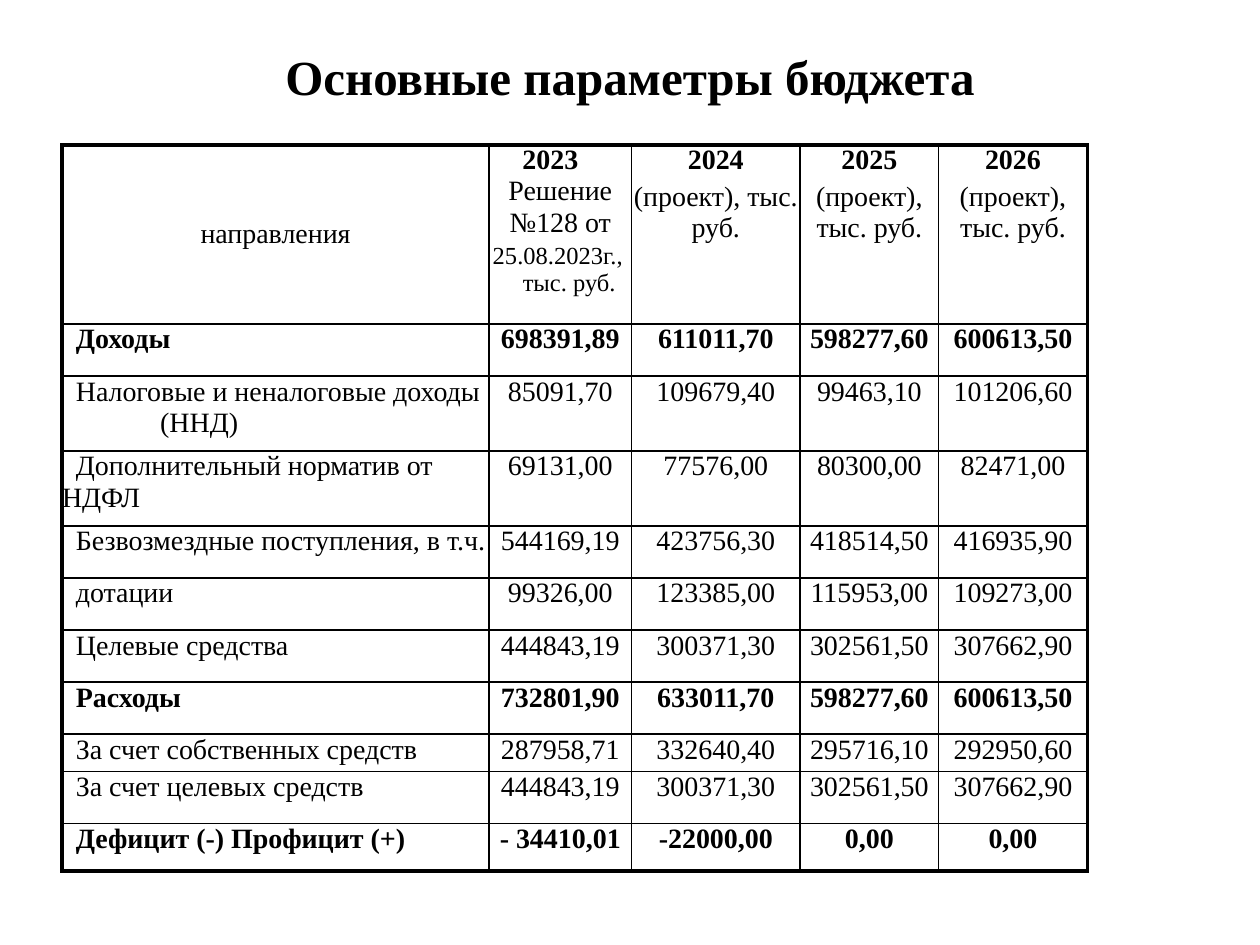
from lxml.etree import SubElement
from pptx import Presentation
from pptx.dml.color import RGBColor
from pptx.enum.text import MSO_ANCHOR, PP_ALIGN
from pptx.oxml.ns import qn
from pptx.util import Cm, Pt

COLORS = {"text": "000000", "border": "000000"}
FONT = "Times New Roman"
THIN, THICK = Pt(1), Pt(2.25)
COLUMN_WIDTHS = [8.61, 2.87, 3.4, 2.79, 3]
ROW_HEIGHTS = [3.61, 1.05, 1.51, 1.51, 1.05, 1.05, 1.05, 1.05, 0.75, 1.05, 0.96]
LABEL_INDENT = 0.28
YEARS = ["2024", "2025", "2026"]
BOLD_ROWS = {"Доходы", "Расходы", "Дефицит (-) Профицит (+)"}
BUDGET = [
    ("Доходы", "698391,89", "611011,70", "598277,60", "600613,50"),
    ("Налоговые и неналоговые доходы", "85091,70", "109679,40", "99463,10", "101206,60"),
    ("Дополнительный норматив от НДФЛ", "69131,00", "77576,00", "80300,00", "82471,00"),
    ("Безвозмездные поступления, в т.ч.", "544169,19", "423756,30", "418514,50", "416935,90"),
    ("дотации", "99326,00", "123385,00", "115953,00", "109273,00"),
    ("Целевые средства", "444843,19", "300371,30", "302561,50", "307662,90"),
    ("Расходы", "732801,90", "633011,70", "598277,60", "600613,50"),
    ("За счет собственных средств", "287958,71", "332640,40", "295716,10", "292950,60"),
    ("За счет целевых средств", "444843,19", "300371,30", "302561,50", "307662,90"),
    ("Дефицит (-) Профицит (+)", "- 34410,01", "-22000,00", "0,00", "0,00"),
]


def format_paragraph(paragraph, size, bold, align):
    paragraph.alignment = align
    font = paragraph.font
    font.name, font.size, font.bold = FONT, Pt(size), bold
    font.color.rgb = RGBColor.from_string(COLORS["text"])


def write_line(cell, text, size=16, bold=False, align=PP_ALIGN.CENTER,
               gap=20, left=0, right=0, indent=0):
    frame = cell.text_frame
    paragraph = frame.add_paragraph() if frame.text else frame.paragraphs[0]
    paragraph.text = text
    format_paragraph(paragraph, size, bold, align)
    properties = paragraph._p.get_or_add_pPr()
    for name, length in (("marL", left), ("marR", right), ("indent", indent)):
        properties.set(name, str(int(Cm(length))))
    spacing = properties.makeelement(qn("a:spcBef"))
    SubElement(spacing, qn("a:spcPct")).set("val", str(gap * 1000))
    properties.insert(0, spacing)


def draw_borders(cell, widths):
    properties = cell._tc.get_or_add_tcPr()
    for side, width in widths.items():
        line = SubElement(properties, qn(f"a:ln{side}"), w=str(int(width)))
        fill = SubElement(line, qn("a:solidFill"))
        SubElement(fill, qn("a:srgbClr"), val=COLORS["border"])


def add_title(slide):
    title = slide.shapes.title
    title.left, title.top, title.width, title.height = Cm(1.27), Cm(0.76), Cm(22.86), Cm(1.55)
    title.text_frame.text = "Основные параметры бюджета"
    title.text_frame.vertical_anchor = MSO_ANCHOR.MIDDLE
    format_paragraph(title.text_frame.paragraphs[0], 28, True, PP_ALIGN.CENTER)


def add_budget_table(slide):
    rows, columns = len(ROW_HEIGHTS), len(COLUMN_WIDTHS)
    table = slide.shapes.add_table(rows, columns, Cm(1.25), Cm(2.92),
                                   Cm(sum(COLUMN_WIDTHS)), Cm(sum(ROW_HEIGHTS))).table
    table.first_row = table.horz_banding = False
    for column, width in zip(table.columns, COLUMN_WIDTHS):
        column.width = Cm(width)
    for row, height in zip(table.rows, ROW_HEIGHTS):
        row.height = Cm(height)
    for r in range(rows):
        for c in range(columns):
            cell = table.cell(r, c)
            cell.margin_left = cell.margin_right = cell.margin_top = cell.margin_bottom = 0
            draw_borders(cell, {
                "L": THICK if c == 0 else THIN,
                "R": THICK if c == columns - 1 else THIN,
                "T": THICK if r == 0 else THIN,
                "B": THICK if r == rows - 1 else THIN,
            })
            cell.fill.background()
    return table


def fill_header(table):
    directions, decision = table.cell(0, 0), table.cell(0, 1)
    directions.vertical_anchor = MSO_ANCHOR.MIDDLE
    write_line(directions, "направления")
    write_line(decision, "2023", bold=True, right=0.4)
    write_line(decision, "Решение №128 от", gap=0)
    write_line(decision, "25.08.2023г.,", size=14, right=0.1)
    write_line(decision, "тыс. руб.", size=14, gap=0, left=0.36)
    for c, year in enumerate(YEARS, start=2):
        write_line(table.cell(0, c), year, bold=True)
        write_line(table.cell(0, c), "(проект), тыс. руб.")


def fill_budget(table):
    for r, (label, *amounts) in enumerate(BUDGET, start=1):
        bold = label in BOLD_ROWS
        write_line(table.cell(r, 0), label, bold=bold, align=PP_ALIGN.LEFT, indent=LABEL_INDENT)
        for c, amount in enumerate(amounts, start=1):
            write_line(table.cell(r, c), amount, bold=bold)
    write_line(table.cell(2, 0), "(ННД)", align=PP_ALIGN.LEFT, gap=0, left=1.98)


def main():
    presentation = Presentation()
    presentation.slide_width, presentation.slide_height = Cm(25.4), Cm(19.05)
    slide = presentation.slides.add_slide(presentation.slide_layouts[5])
    add_title(slide)
    table = add_budget_table(slide)
    fill_header(table)
    fill_budget(table)
    presentation.save("out.pptx")


if __name__ == "__main__":
    main()
